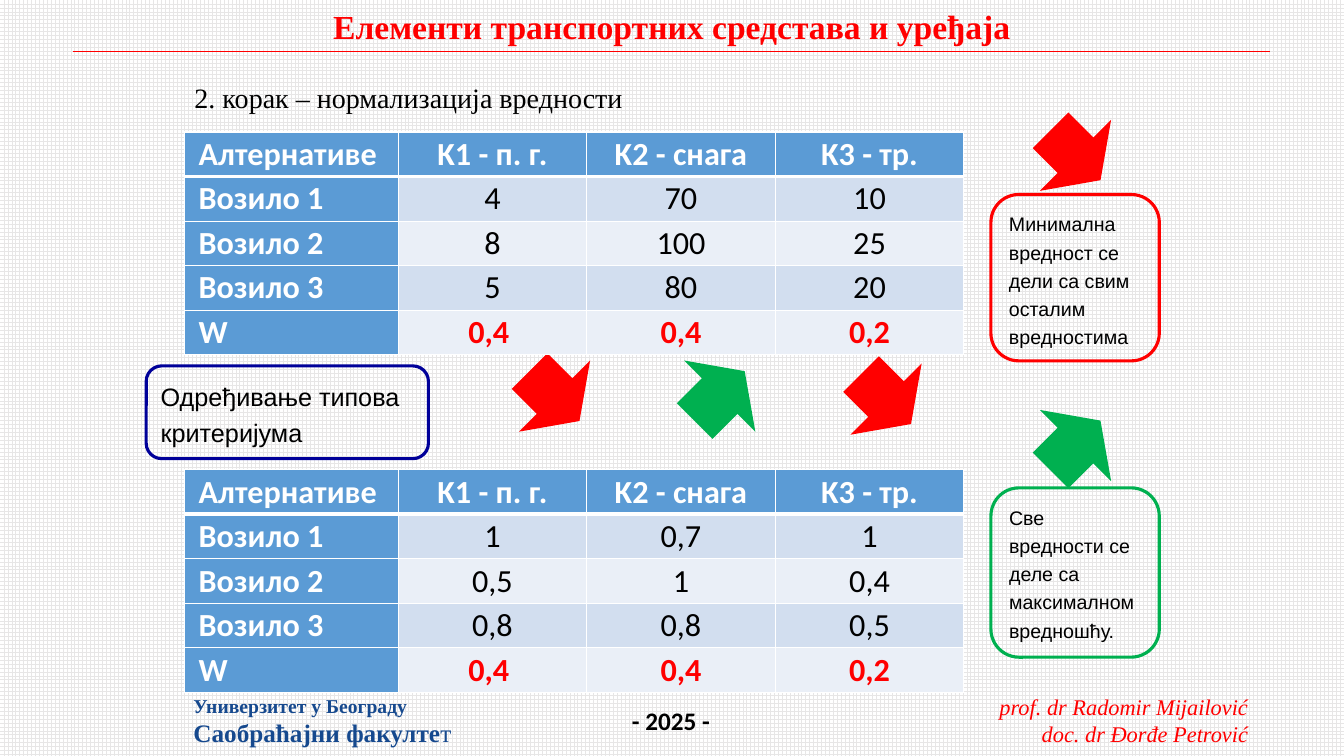
from dataclasses import dataclass
from typing import NamedTuple

import pptx
import pptx.util
import pptx.dml.color
import pptx.enum.dml
import pptx.enum.shapes
import pptx.enum.text
import pptx.oxml
import pptx.oxml.ns
from lxml import etree

ALIGN = pptx.enum.text.PP_ALIGN
SHAPE = pptx.enum.shapes.MSO_SHAPE


@dataclass(frozen=True)
class Theme:
    serif: str = "Times New Roman"
    sans: str = "Arial"
    body: str = "Calibri"
    red: str = "FF0000"
    green: str = "00B050"
    navy: str = "000099"
    university: str = "16498E"
    black: str = "000000"
    white: str = "FFFFFF"
    grid: str = "E7E6E6"
    header: str = "5B9BD5"
    bands: tuple = ("EAEFF7", "D2DEEF")
    title: int = 24
    table: int = 23
    subtitle: int = 20
    large: int = 18
    author: int = 16
    small: int = 14


T = Theme()


class Box(NamedTuple):
    """A frame in percent of the slide's width and height."""
    x: float
    y: float
    w: float
    h: float


class Run(NamedTuple):
    text: str
    size: int
    font: str
    color: str
    bold: bool = False
    italic: bool = False


class Label(NamedTuple):
    box: Box
    lines: list
    align: object = ALIGN.LEFT


class Callout(NamedTuple):
    box: Box
    text: str
    size: int
    color: str


class Arrow(NamedTuple):
    x: float
    y: float
    down: bool


class Grid(NamedTuple):
    y: float
    values: list


ARROW_W, ARROW_H = 5.25, 13.33
TABLE_X, NAME_W, VALUE_W, ROW_H = 13.73, 15.9, 14.03, 5.89
HEADINGS = ["Алтернативе", "K1 - п. г.", "K2 - снага", "K3 - тр."]
WEIGHTS = ["W", "0,4 ", "0,4", "0,2"]

TITLE = Label(Box(23.77, 0.13, 52.43, 6.67), [[
    Run("Елементи транспортних средстава и уређаја", T.title, T.serif, T.red, True)]],
    ALIGN.CENTER)
LABELS = [
    Label(Box(73.28, 91.07, 20.33, 8.53), [
        [Run(name, T.author, T.serif, T.red, italic=True)]
        for name in ("prof. dr Radomir Mijailović", "doc. dr Đorđe Petrović")], ALIGN.RIGHT),
    Label(Box(46.28, 92.67, 7.35, 5.33), [[Run("- 2025 -", T.large, T.body, T.black, True)]]),
    Label(Box(13.65, 91.07, 20.93, 8.53), [
        [Run("Универзитет у Београду", T.small, T.serif, T.university, True)],
        [Run("Саобраћајни факулте", T.large, T.serif, T.university, True),
         Run("т", T.large, T.serif, T.university)]]),
    Label(Box(13.73, 10, 34.28, 5.87), [
        [Run("2. корак – нормализација вредности", T.subtitle, T.serif, T.black)]]),
]
CALLOUTS = [
    Callout(Box(10.88, 48.4, 21, 12.27), "Одређивање типова критеријума", T.large, T.navy),
    Callout(Box(73.73, 25.73, 12.53, 22),
            "Минимална вредност се дели са свим осталим вредностима", T.small, T.red),
    Callout(Box(73.73, 64.53, 12.53, 22.4),
            "Све вредности се деле са максималном вредношћу.", T.small, T.green),
]
ARROWS = [Arrow(38.63, 45.73, True), Arrow(50.93, 45.73, False),
          Arrow(77.4, 13.87, True), Arrow(77.4, 52.27, False)]
TOP_ARROW = Arrow(63.3, 46.13, True)
GRIDS = [
    Grid(17.47, [["4", "70", "10"], ["8", "100", "25"], ["5", "80", "20"]]),
    Grid(62.13, [["1", "0,7", "1"], ["0,5", "1", "0,4"], ["0,8", "0,8", "0,5"]]),
]

prs = pptx.Presentation()
prs.slide_width = pptx.util.Inches(13.33)
prs.slide_height = pptx.util.Inches(7.5)


def across(share: float) -> int:
    return round(prs.slide_width * share / 100)


def down(share: float) -> int:
    return round(prs.slide_height * share / 100)


def frame(box: Box) -> tuple:
    return across(box.x), down(box.y), across(box.w), down(box.h)


def rgb(color: str) -> pptx.dml.color.RGBColor:
    return pptx.dml.color.RGBColor.from_string(color)


def write(p, runs: list, align) -> None:
    p.text = runs[0].text
    for extra in runs[1:]:
        p.add_run().text = extra.text
    p.alignment = align
    for r, run in zip(p.runs, runs):
        r.font.name, r.font.size = run.font, pptx.util.Pt(run.size)
        r.font.bold, r.font.italic = run.bold, run.italic
        r.font.color.rgb = rgb(run.color)


def fill_label(sp, label: Label) -> None:
    sp.left, sp.top, sp.width, sp.height = frame(label.box)
    tf = sp.text_frame
    tf.word_wrap = False
    tf.auto_size = pptx.enum.text.MSO_AUTO_SIZE.SHAPE_TO_FIT_TEXT
    tf.vertical_anchor = pptx.enum.text.MSO_ANCHOR.TOP
    for i, runs in enumerate(label.lines):
        write(tf.paragraphs[0] if i == 0 else tf.add_paragraph(), runs, label.align)


def add_rule(s) -> None:
    y = down(6.8)
    line = s.shapes.add_connector(pptx.enum.shapes.MSO_CONNECTOR.STRAIGHT,
                                  across(5.4), y, across(94.5), y)
    line.line.color.rgb = rgb(T.red)
    line.line.width = pptx.util.Pt(0.5)
    etree.SubElement(line._element.spPr, pptx.oxml.ns.qn("a:effectLst"))


def add_callout(s, callout: Callout) -> None:
    sp = s.shapes.add_shape(SHAPE.ROUNDED_RECTANGLE, *frame(callout.box))
    sp.shadow.inherit = False
    sp.fill.background()
    sp.line.color.rgb = rgb(callout.color)
    sp.line.width = pptx.util.Pt(2.25)
    tf = sp.text_frame
    tf.word_wrap = True
    tf.auto_size = pptx.enum.text.MSO_AUTO_SIZE.SHAPE_TO_FIT_TEXT
    tf.vertical_anchor = pptx.enum.text.MSO_ANCHOR.TOP
    p = tf.paragraphs[0]
    write(p, [Run(callout.text, callout.size, T.sans, T.black)], ALIGN.LEFT)
    p.line_spacing = 1.2


def add_arrow(s, arrow: Arrow) -> None:
    sp = s.shapes.add_shape(SHAPE.RIGHT_ARROW, *frame(Box(arrow.x, arrow.y, ARROW_W, ARROW_H)))
    sp.rotation = 45 if arrow.down else 315
    sp.shadow.inherit = False
    sp.fill.solid()
    sp.fill.fore_color.rgb = rgb(T.red if arrow.down else T.green)
    sp.line.fill.background()


def set_borders(cell, row: int) -> None:
    """White 1 pt edges, with 3 pt between the header and the first row."""
    widths = {"L": 1, "R": 1, "T": 3 if row == 1 else 1, "B": 3 if row == 0 else 1}
    for i, (side, width) in enumerate(widths.items()):
        cell._tc.get_or_add_tcPr().insert(i, pptx.oxml.parse_xml(
            f'<a:ln{side} {pptx.oxml.ns.nsdecls("a")} w="{pptx.util.Pt(width)}"><a:solidFill>'
            f'<a:srgbClr val="{T.white}"/></a:solidFill></a:ln{side}>'))


def add_grid(s, grid: Grid) -> None:
    vehicles = [[f"Возило {n}", *row] for n, row in enumerate(grid.values, 1)]
    rows = [HEADINGS, *vehicles, WEIGHTS]
    box = Box(TABLE_X, grid.y, NAME_W + 3 * VALUE_W, len(rows) * ROW_H)
    table = s.shapes.add_table(len(rows), len(HEADINGS), *frame(box)).table
    for j, column in enumerate(table.columns):
        column.width = across(VALUE_W if j else NAME_W)
    for i, row in enumerate(rows):
        table.rows[i].height = down(ROW_H)
        for j, text in enumerate(row):
            cell = table.cell(i, j)
            heading, weight = i == 0 or j == 0, row is WEIGHTS
            color = T.white if heading else T.red if weight else T.black
            cell.margin_left = cell.margin_right = pptx.util.Inches(0.14)
            cell.margin_top = cell.margin_bottom = 0
            cell.vertical_anchor = pptx.enum.text.MSO_ANCHOR.MIDDLE
            cell.fill.solid()
            cell.fill.fore_color.rgb = rgb(T.header if heading else T.bands[i % 2])
            write(cell.text_frame.paragraphs[0],
                  [Run(text, T.table, T.body, color, heading or weight)],
                  ALIGN.CENTER if j else ALIGN.LEFT)
            set_borders(cell, i)


def main() -> None:
    s = prs.slides.add_slide(prs.slide_layouts[5])
    background = s.background.fill
    background.patterned()
    background.pattern = pptx.enum.dml.MSO_PATTERN.LARGE_GRID
    background.fore_color.rgb, background.back_color.rgb = rgb(T.grid), rgb(T.white)
    fill_label(s.shapes.title, TITLE)
    add_rule(s)
    for label in LABELS:
        fill_label(s.shapes.add_textbox(*frame(label.box)), label)
    for arrow in ARROWS:
        add_arrow(s, arrow)
    for callout in CALLOUTS:
        add_callout(s, callout)
    for grid in GRIDS:
        add_grid(s, grid)
    add_arrow(s, TOP_ARROW)
    prs.save("out.pptx")


if __name__ == "__main__":
    main()
